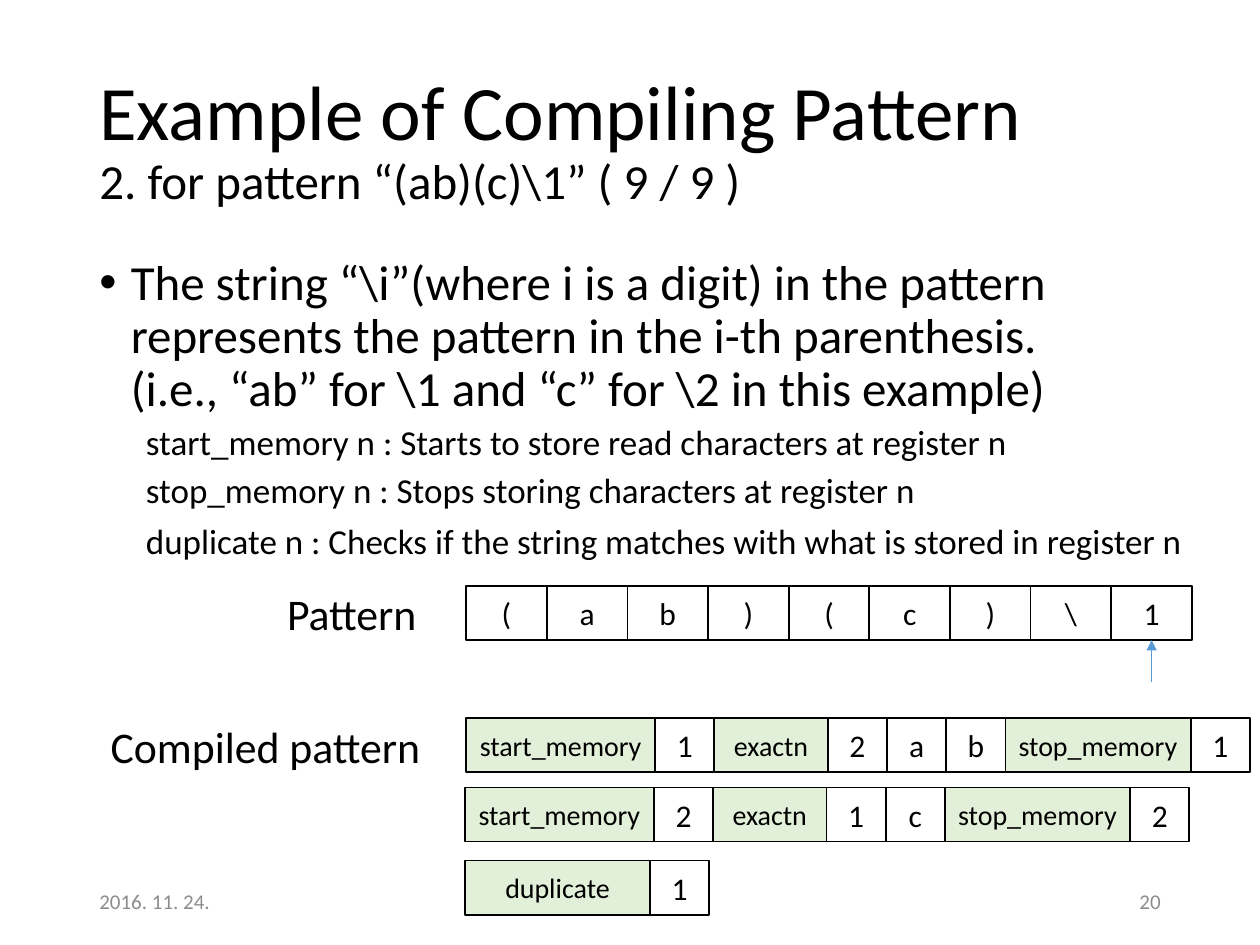
from dataclasses import dataclass

from lxml import etree
from pptx import Presentation
from pptx.dml.color import RGBColor
from pptx.enum.shapes import MSO_CONNECTOR, MSO_SHAPE
from pptx.enum.text import MSO_ANCHOR, MSO_AUTO_SIZE, PP_ALIGN
from pptx.oxml.ns import qn
from pptx.util import Inches, Pt

RECTANGLE = MSO_SHAPE.RECTANGLE
STRAIGHT = MSO_CONNECTOR.STRAIGHT
TOP, MIDDLE = MSO_ANCHOR.TOP, MSO_ANCHOR.MIDDLE
LEFT, CENTER, RIGHT = PP_ALIGN.LEFT, PP_ALIGN.CENTER, PP_ALIGN.RIGHT
FIT_SHAPE = MSO_AUTO_SIZE.SHAPE_TO_FIT_TEXT
BOTTOM_SIDE = 2


@dataclass(frozen=True)
class Theme:
    font: str = "Calibri"
    ink: RGBColor = RGBColor(0x00, 0x00, 0x00)
    muted: RGBColor = RGBColor(0x8C, 0x8C, 0x8C)
    opcode_fill: RGBColor = RGBColor(0xE2, 0xF0, 0xD9)
    arrow: RGBColor = RGBColor(0x5B, 0x9B, 0xD5)
    title: int = 44
    body: int = 28
    label: int = 25
    definition: int = 20
    value: int = 18
    opcode: int = 16
    footer: int = 12
    cell_height: float = 0.43
    pattern_width: float = 0.64
    value_width: float = 0.47


class SlideBuilder:
    def __init__(self, slide, theme):
        self.slide = slide
        self.theme = theme

    def style(self, paragraph, size, color=None, align=LEFT):
        paragraph.alignment = align
        paragraph.font.name = self.theme.font
        paragraph.font.size = Pt(size)
        paragraph.font.color.rgb = color or self.theme.ink

    def frame(self, left, top, width, height, anchor=TOP):
        box = self.slide.shapes.add_textbox(
            Inches(left), Inches(top), Inches(width), Inches(height))
        box.text_frame.word_wrap = True
        box.text_frame.vertical_anchor = anchor
        return box.text_frame

    def title(self, heading, subtitle, *place):
        paragraph = self.frame(*place, anchor=MIDDLE).paragraphs[0]
        self.style(paragraph, self.theme.body)
        paragraph.line_spacing = 0.9
        run = paragraph.add_run()
        run.text = heading
        run.font.size = Pt(self.theme.title)
        paragraph.add_line_break()
        paragraph.add_run().text = subtitle

    def bullet(self, text, *place):
        paragraph = self.frame(*place).paragraphs[0]
        paragraph.text = text
        paragraph.line_spacing = 0.9
        paragraph.space_before = Pt(10)
        properties = paragraph._p.get_or_add_pPr()
        properties.set("marL", str(Inches(0.25)))
        properties.set("indent", str(Inches(-0.25)))
        etree.SubElement(properties, qn("a:buFont")).set("typeface", "Arial")
        etree.SubElement(properties, qn("a:buChar")).set("char", "•")
        self.style(paragraph, self.theme.body)

    def label(self, text, size, *place):
        frame = self.frame(*place)
        frame.auto_size = FIT_SHAPE
        frame.text = text
        self.style(frame.paragraphs[0], size)

    def footer(self, text, left, align):
        frame = self.frame(left, 6.95, 2.25, 0.4, anchor=MIDDLE)
        frame.text = text
        self.style(frame.paragraphs[0], self.theme.footer, self.theme.muted, align)

    def cell(self, text, left, top, width, size, fill=None):
        shape = self.slide.shapes.add_shape(
            RECTANGLE, Inches(left), Inches(top),
            Inches(width), Inches(self.theme.cell_height))
        shape.shadow.inherit = False
        if fill is None:
            shape.fill.background()
        else:
            shape.fill.solid()
            shape.fill.fore_color.rgb = fill
        shape.line.color.rgb = self.theme.ink
        shape.line.width = Pt(1)
        shape.text_frame.word_wrap = False
        shape.text_frame.vertical_anchor = MIDDLE
        shape.text_frame.text = text
        self.style(shape.text_frame.paragraphs[0], size, align=CENTER)
        return shape

    def pattern_row(self, characters, left, top):
        width = self.theme.pattern_width
        return [self.cell(character, left + index * width, top, width, self.theme.value)
                for index, character in enumerate(characters)]

    def code_row(self, tokens, opcode_widths, left, top):
        for token in tokens:
            if token in opcode_widths:
                width = opcode_widths[token]
                self.cell(token, left, top, width, self.theme.opcode,
                          self.theme.opcode_fill)
            else:
                width = self.theme.value_width
                self.cell(token, left, top, width, self.theme.value)
            left += width

    def pointer(self, cell, length):
        center = cell.left + cell.width // 2
        bottom = cell.top + cell.height
        arrow = self.slide.shapes.add_connector(
            STRAIGHT, center, bottom + Inches(length), center, bottom)
        arrow.end_connect(cell, BOTTOM_SIDE)
        arrow.line.color.rgb = self.theme.arrow
        arrow.line.width = Pt(0.5)
        etree.SubElement(arrow.line._get_or_add_ln(), qn("a:tailEnd")).set("type", "triangle")
        etree.SubElement(arrow._element.spPr, qn("a:effectLst"))


def main():
    presentation = Presentation()
    presentation.slide_width = Inches(10)
    presentation.slide_height = Inches(7.5)
    slide = presentation.slides.add_slide(presentation.slide_layouts[6])
    theme = Theme()
    builder = SlideBuilder(slide, theme)

    builder.title("Example of Compiling Pattern ", "2. for pattern “(ab)(c)\\1” ( 9 / 9 )",
                  0.69, 0.4, 8.62, 1.45)
    builder.bullet("The string “\\i”(where i is a digit) in the pattern represents "
                   "the pattern in the i-th parenthesis. \v"
                   "(i.e., “ab” for \\1 and “c” for \\2 in this example)",
                   0.69, 2, 8.77, 4.76)

    definitions = [
        ("start_memory n : Starts to store read characters at register n", 3.29),
        ("stop_memory n : Stops storing characters at register n", 3.67),
        ("duplicate n : Checks if the string matches with what is stored in register n", 4.07),
    ]
    for text, top in definitions:
        builder.label(text, theme.definition, 1.06, top, 8.57, 0.44)

    builder.label("Pattern", theme.label, 2.18, 4.61, 2.55, 0.52)
    pattern_cells = builder.pattern_row("(ab)(c)\\1", 3.7, 4.65)
    builder.pointer(pattern_cells[-1], 0.33)

    builder.label("Compiled pattern", theme.label, 0.78, 5.66, 2.91, 0.52)
    opcode_widths = {"start_memory": 1.5, "exactn": 0.9, "stop_memory": 1.47, "duplicate": 1.47}
    code_rows = [
        ("start_memory 1 exactn 2 a b stop_memory 1", 3.7, 5.7),
        ("start_memory 2 exactn 1 c stop_memory 2", 3.69, 6.25),
        ("duplicate 1", 3.69, 6.83),
    ]
    for code, left, top in code_rows:
        builder.code_row(code.split(), opcode_widths, left, top)

    builder.footer("2016. 11. 24.", 0.69, LEFT)
    builder.footer("20", 7.06, RIGHT)
    presentation.save("out.pptx")


if __name__ == "__main__":
    main()
